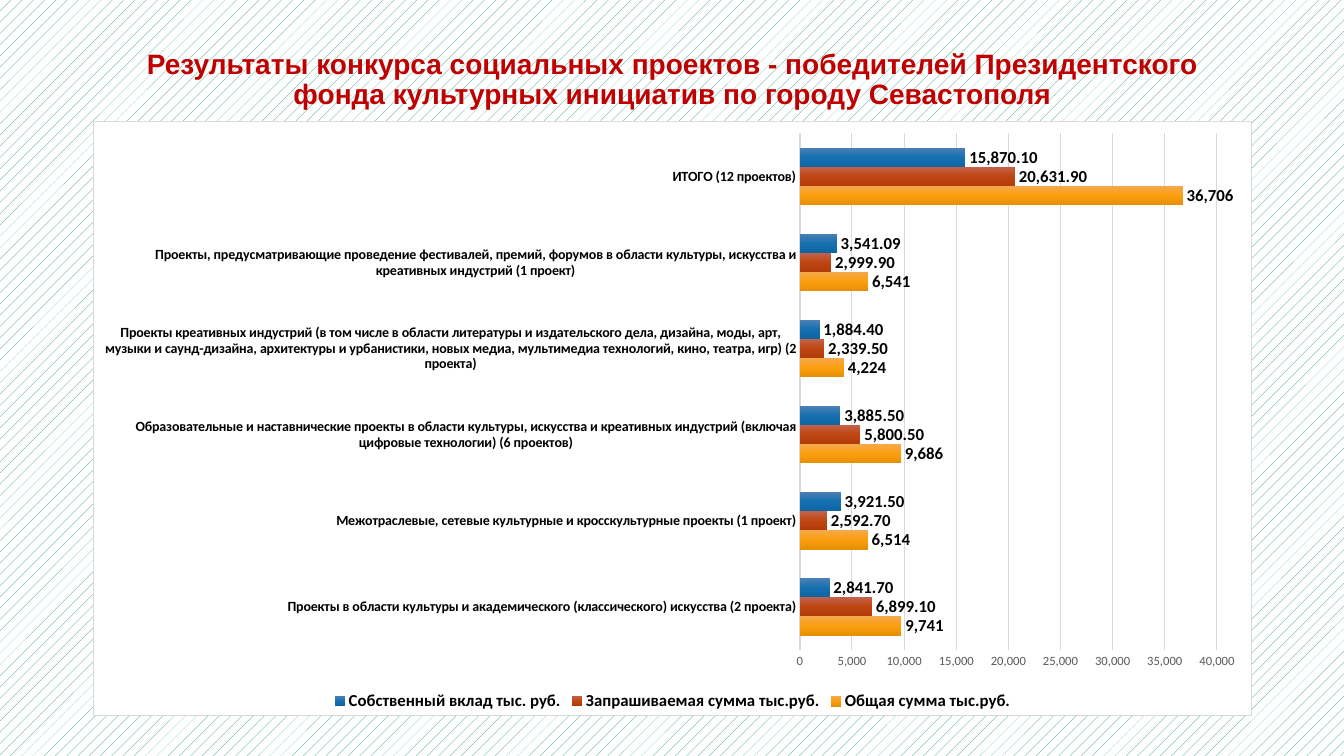
import pptx
import pptx.util
import pptx.oxml
import pptx.chart.data
import pptx.dml.color
import pptx.enum.chart
import pptx.enum.dml
import pptx.enum.text
from dataclasses import dataclass
from pptx.util import Inches

A = "http://schemas.openxmlformats.org/drawingml/2006/main"
C = "http://schemas.openxmlformats.org/drawingml/2006/chart"


@dataclass(frozen=True)
class Theme:
    red: str = "C00000"
    black: str = "000000"
    grey: str = "595959"
    rule: str = "D9D9D9"
    white: str = "FFFFFF"
    green: str = "1D9A78"
    orange: tuple = ("F5A84E", "FC9F0E", "E58F07")
    rust: tuple = ("C2634D", "BF4611", "B13B08")
    blue: tuple = ("4E80B5", "1670B0", "0D65A3")
    head: str = "Arial"
    body: str = "Calibri"
    title: int = 20
    label: int = 12
    item: int = 10
    tick: int = 9


T = Theme()
CATS = [
    "Проекты в области культуры и академического (классического) искусства (2 проекта)",
    "Межотраслевые, сетевые культурные и кросскультурные проекты (1 проект)",
    "Образовательные и наставнические проекты в области культуры, искусства и креативных индустрий "
    "(включая цифровые технологии) (6 проектов)",
    "Проекты креативных индустрий (в том числе в области литературы и издательского дела, дизайна, моды, арт, "
    "музыки и саунд-дизайна, архитектуры и урбанистики, новых медиа, мультимедиа технологий, кино, театра, игр) "
    "(2 проекта)",
    "Проекты, предусматривающие проведение фестивалей, премий, форумов в области культуры, искусства и "
    "креативных индустрий (1 проект)",
    "ИТОГО (12 проектов)",
]
SERIES = [
    ("Общая сумма тыс.руб.", (9741, 6514, 9686, 4224, 6541, 36706), "#,##0", T.orange),
    ("Запрашиваемая сумма тыс.руб.", (6899.1, 2592.7, 5800.5, 2339.5, 2999.9, 20631.9), "#,##0.00", T.rust),
    ("Собственный вклад тыс. руб.", (2841.7, 3921.5, 3885.5, 1884.4, 3541.09, 15870.1), "#,##0.00", T.blue),
]


def rgb(tone):
    return pptx.dml.color.RGBColor.from_string(tone)


def style(font, size, tone=T.black, bold=False, face=T.body):
    font.size = pptx.util.Pt(size)
    font.bold = bold
    font.name = face
    font.color.rgb = rgb(tone)


def write(slide, box, text, **form):
    frame = slide.shapes.add_textbox(*box).text_frame
    frame.word_wrap = True
    frame.vertical_anchor = pptx.enum.text.MSO_ANCHOR.MIDDLE
    para = frame.paragraphs[0]
    para.alignment = pptx.enum.text.PP_ALIGN.CENTER
    para.line_spacing = 0.9
    run = para.add_run()
    run.text = text
    style(run.font, **form)


def rule(line, width):
    line.color.rgb = rgb(T.rule)
    line.width = pptx.util.Pt(width)


def shade(series, tones):
    stops = "".join(
        f'<a:gs pos="{i * 50000}"><a:srgbClr val="{tone}"/></a:gs>' for i, tone in enumerate(tones))
    series.format.fill.background()
    props = series.format.fill._xPr
    props.replace(props.find(f"{{{A}}}noFill"), pptx.oxml.parse_xml(
        f'<a:gradFill xmlns:a="{A}" rotWithShape="1"><a:gsLst>{stops}</a:gsLst>'
        '<a:lin ang="5400000" scaled="0"/></a:gradFill>'))


def panel(chart):
    chart._chartSpace.find(f"{{{C}}}chart").addnext(pptx.oxml.parse_xml(
        f'<c:spPr xmlns:c="{C}" xmlns:a="{A}"><a:solidFill><a:srgbClr val="{T.white}"/></a:solidFill>'
        f'<a:ln w="9525"><a:solidFill><a:srgbClr val="{T.rule}"/></a:solidFill></a:ln></c:spPr>'))


def place(chart, **spots):
    area = chart._chartSpace.find(f"{{{C}}}chart/{{{C}}}plotArea")
    for old in area.findall(f"{{{C}}}layout"):
        area.remove(old)
    modes = "".join(f'<c:{key}Mode val="edge"/>' for key in "xy")
    sides = "".join(f'<c:{key} val="{val}"/>' for key, val in spots.items())
    area.insert(0, pptx.oxml.parse_xml(
        f'<c:layout xmlns:c="{C}"><c:manualLayout><c:layoutTarget val="inner"/>'
        f'{modes}{sides}</c:manualLayout></c:layout>'))


def axes(chart):
    enum = pptx.enum.chart
    items, scale = chart.category_axis, chart.value_axis
    for axis in (items, scale):
        axis.major_tick_mark = axis.minor_tick_mark = enum.XL_TICK_MARK.NONE
    style(items.tick_labels.font, T.item, bold=True)
    rule(items.format.line, 1)
    style(scale.tick_labels.font, T.tick, T.grey)
    scale.tick_labels.number_format = "#,##0"
    scale.tick_labels.number_format_is_linked = False
    scale.minimum_scale, scale.maximum_scale, scale.major_unit = 0, 40000, 5000
    scale.format.line.fill.background()
    scale.has_major_gridlines = True
    rule(scale.major_gridlines.format.line, 0.75)


def bars(slide, box):
    enum = pptx.enum.chart
    data = pptx.chart.data.CategoryChartData()
    data.categories = CATS
    for name, vals, form, tones in SERIES:
        data.add_series(name, vals, form)
    chart = slide.shapes.add_chart(enum.XL_CHART_TYPE.BAR_CLUSTERED, *box, data).chart
    style(chart.font, T.item)
    chart.has_title = False
    panel(chart)
    place(chart, x=0.61, y=0.02, w=0.36, h=0.87)
    axes(chart)
    plot = chart.plots[0]
    plot.gap_width = 150
    plot.vary_by_categories = False
    for series, (name, vals, form, tones) in zip(plot.series, SERIES):
        shade(series, tones)
        labels = series.data_labels
        labels.show_value = True
        labels.number_format = form
        labels.number_format_is_linked = False
        labels.position = enum.XL_LABEL_POSITION.OUTSIDE_END
        style(labels.font, T.label, bold=True)
    chart.has_legend = True
    chart.legend.position = enum.XL_LEGEND_POSITION.BOTTOM
    chart.legend.include_in_layout = False
    style(chart.legend.font, T.label, bold=True)


def back(slide):
    fill = slide.background.fill
    fill.patterned()
    fill.pattern = pptx.enum.dml.MSO_PATTERN.PERCENT_10
    fill.fore_color.rgb = rgb(T.green)
    fill.back_color.rgb = rgb(T.white)


def main():
    deck = pptx.Presentation()
    deck.slide_width, deck.slide_height = Inches(13.33), Inches(7.5)
    slide = deck.slides.add_slide(deck.slide_layouts[6])
    back(slide)
    left, width = Inches(0.92), Inches(11.5)
    write(slide, (left, Inches(0.4), width, Inches(0.8)),
          "Результаты конкурса социальных проектов - победителей Президентского "
          "фонда культурных инициатив по городу Севастополя",
          size=T.title, tone=T.red, bold=True, face=T.head)
    bars(slide, (left, Inches(1.2), width, Inches(5.9)))
    deck.save("out.pptx")


if __name__ == "__main__":
    main()
